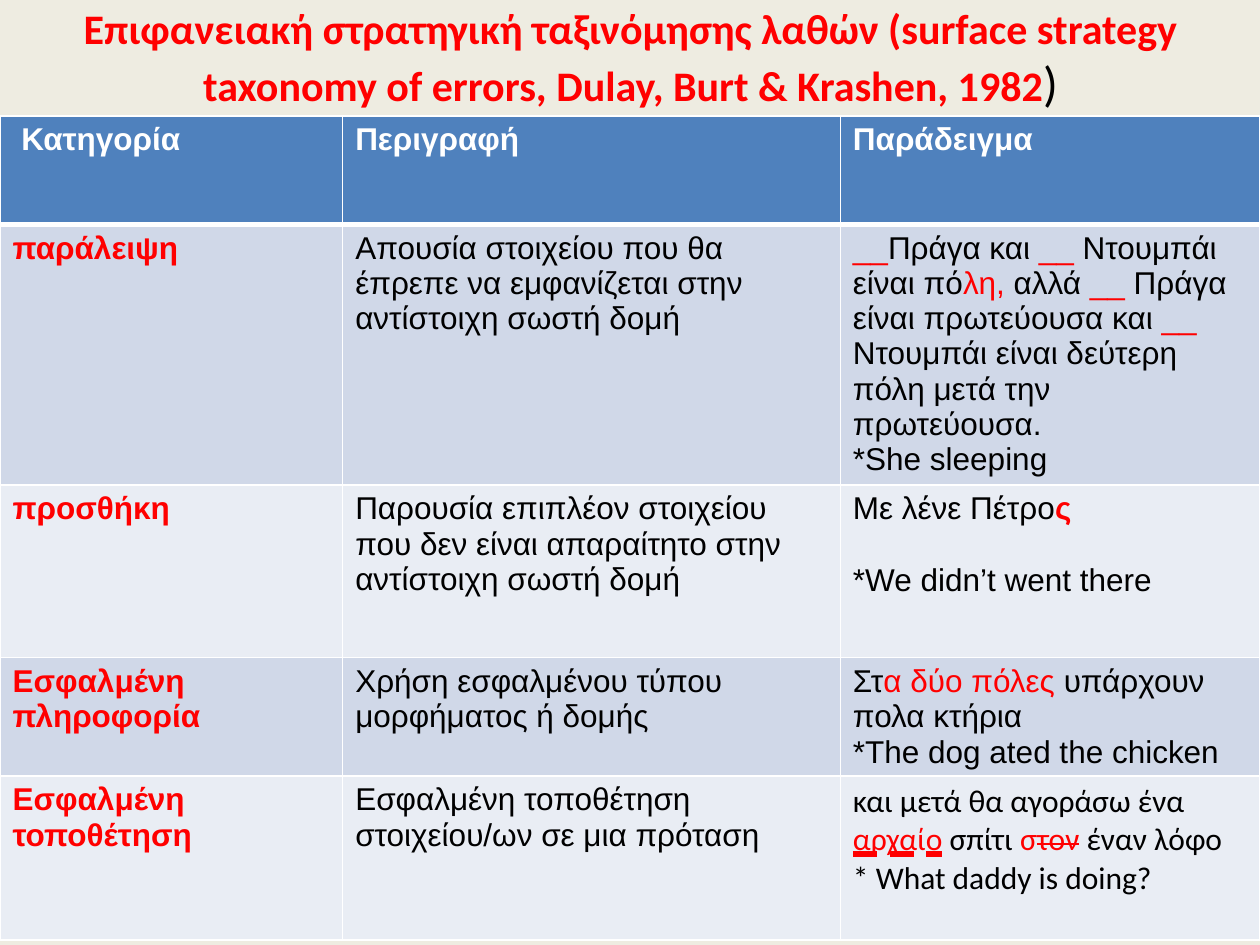
from lxml import etree
from pptx import Presentation
from pptx.dml.color import RGBColor
from pptx.enum import text
from pptx.oxml import ns
from pptx.util import Inches, Pt

COLORS = {"background": "EEECE1", "header": "4F81BD", "odd": "D0D8E8",
          "even": "E9EDF4", "white": "FFFFFF", "red": "FF0000", "black": "000000"}

# Style name -> colour and font values
STYLES = {
    "title": ("red", {"size": Pt(24), "name": "Calibri", "bold": True}),
    "bracket": ("black", {"size": Pt(28), "name": "Calibri", "bold": False}),
    "header": ("white", {"bold": True}),
    "category": ("red", {"bold": True}),
    "plain": ("black", {}),
    "error": ("red", {}),
    "calibri": ("black", {"name": "Calibri"}),
    "calibri error": ("red", {"name": "Calibri"}),
    "moved": ("red", {"name": "Calibri",
                      "underline": text.MSO_UNDERLINE.DASH_HEAVY_LINE}),
    "struck": ("red", {"name": "Calibri"}),
}
CELL_FONT = {"size": Pt(18), "name": "Arial", "bold": False}

TITLE = [("Επιφανειακή στρατηγική ταξινόμησης λαθών (surface strategy "
          "taxonomy οf errors, Dulay, Burt & Krashen, 1982", "title"),
         (")", "bracket")]
HEADERS = [" Κατηγορία", "Περιγραφή", "Παράδειγμα"]

# Category, description, example paragraphs made of (words, style)
ERRORS = [
    ("παράλειψη",
     "Απουσία στοιχείου που θα έπρεπε να εμφανίζεται στην αντίστοιχη σωστή δομή",
     [[("__", "error"), ("Πράγα και ", "plain"), ("__", "error"),
       (" Ντουμπάι είναι πό", "plain"), ("λη,", "error"), (" αλλά ", "plain"),
       ("__", "error"), (" Πράγα είναι πρωτεύουσα και ", "plain"), ("__", "error"),
       (" Ντουμπάι είναι δεύτερη πόλη μετά την πρωτεύουσα.", "plain")],
      [("*She sleeping", "plain")]]),
    ("προσθήκη",
     "Παρουσία επιπλέον στοιχείου που δεν είναι απαραίτητο στην αντίστοιχη σωστή δομή",
     [[("Με λένε Πέτρο", "plain"), ("ς", "category")],
      [("*We didn’t went there", "plain")]]),
    ("Εσφαλμένη πληροφορία",
     "Χρήση εσφαλμένου τύπου μορφήματος ή δομής",
     [[("Στ", "plain"), ("α δύο πόλες ", "error"), ("υπάρχουν πολα κτήρια", "plain")],
      [("*The dog ated the chicken", "plain")]]),
    ("Εσφαλμένη τοποθέτηση",
     "Εσφαλμένη τοποθέτηση στοιχείου/ων σε μια πρόταση",
     [[("και μετά θα αγοράσω ένα ", "calibri"), ("αρχαίο", "moved"),
       (" σπίτι ", "calibri"), ("σ", "calibri error"), ("τον", "struck"),
       (" έναν λόφο", "calibri")],
      [("* What daddy is doing?", "calibri")]]),
]
COLUMN_WIDTHS = [2.72, 3.95, 3.33]
ROW_HEIGHTS = [0.86, 2.07, 1.37, 0.94, 1.3]
SPACED_ROW = 2  # its two examples stand one line apart


def rgb(name):
    return RGBColor.from_string(COLORS[name])


def add_runs(paragraph, runs, base):
    for words, style in runs:
        run = paragraph.add_run()
        run.text = words
        color, values = STYLES[style]
        for key, value in {**base, **values}.items():
            setattr(run.font, key, value)
        run.font.color.rgb = rgb(color)
        if style == "struck":
            run._r.get_or_add_rPr().set("strike", "sngStrike")


def add_borders(cell, bottom):
    """Draw white cell edges, 1 pt except for the given bottom width."""
    properties = cell._tc.get_or_add_tcPr()
    widths = {"lnL": 1, "lnR": 1, "lnT": 1, "lnB": bottom}
    for position, (edge, width) in enumerate(widths.items()):
        line = etree.Element(ns.qn(f"a:{edge}"), w=str(Pt(width)))
        fill = etree.SubElement(line, ns.qn("a:solidFill"))
        etree.SubElement(fill, ns.qn("a:srgbClr"), val=COLORS["white"])
        properties.insert(position, line)


def fill_cell(cell, paragraphs, color, bottom=1, gap=0):
    cell.fill.solid()
    cell.fill.fore_color.rgb = rgb(color)
    add_borders(cell, bottom)
    frame = cell.text_frame
    for index, runs in enumerate(paragraphs):
        paragraph = frame.add_paragraph() if index else frame.paragraphs[0]
        if index and gap:
            paragraph.space_before = Pt(gap)
        add_runs(paragraph, runs, CELL_FONT)


def add_title(slide):
    title = slide.shapes.title
    place = {"left": 0.2, "top": 0.3, "width": 9.61, "height": 0.3}
    for key, value in place.items():
        setattr(title, key, Inches(value))
    frame = title.text_frame
    frame.auto_size = text.MSO_AUTO_SIZE.NONE
    frame.vertical_anchor = text.MSO_ANCHOR.MIDDLE
    frame.paragraphs[0].alignment = text.PP_ALIGN.CENTER
    add_runs(frame.paragraphs[0], TITLE, {})


def add_error_table(slide):
    table = slide.shapes.add_table(
        len(ROW_HEIGHTS), len(COLUMN_WIDTHS), 0, Inches(0.92),
        Inches(sum(COLUMN_WIDTHS)), Inches(sum(ROW_HEIGHTS))).table
    for column, width in zip(table.columns, COLUMN_WIDTHS):
        column.width = Inches(width)
    for row, height in zip(table.rows, ROW_HEIGHTS):
        row.height = Inches(height)
    for column, header in enumerate(HEADERS):
        fill_cell(table.cell(0, column), [[(header, "header")]], "header", bottom=3)
    for row, (category, description, examples) in enumerate(ERRORS, 1):
        contents = [[[(category, "category")]], [[(description, "plain")]], examples]
        for column, paragraphs in enumerate(contents):
            fill_cell(table.cell(row, column), paragraphs,
                      "odd" if row % 2 else "even",
                      gap=21 if row == SPACED_ROW else 0)


def main():
    deck = Presentation()
    deck.slide_width, deck.slide_height = Inches(10), Inches(7.5)
    slide = deck.slides.add_slide(deck.slide_layouts[5])
    slide.background.fill.solid()
    slide.background.fill.fore_color.rgb = rgb("background")
    add_title(slide)
    add_error_table(slide)
    deck.save("out.pptx")


if __name__ == "__main__":
    main()
